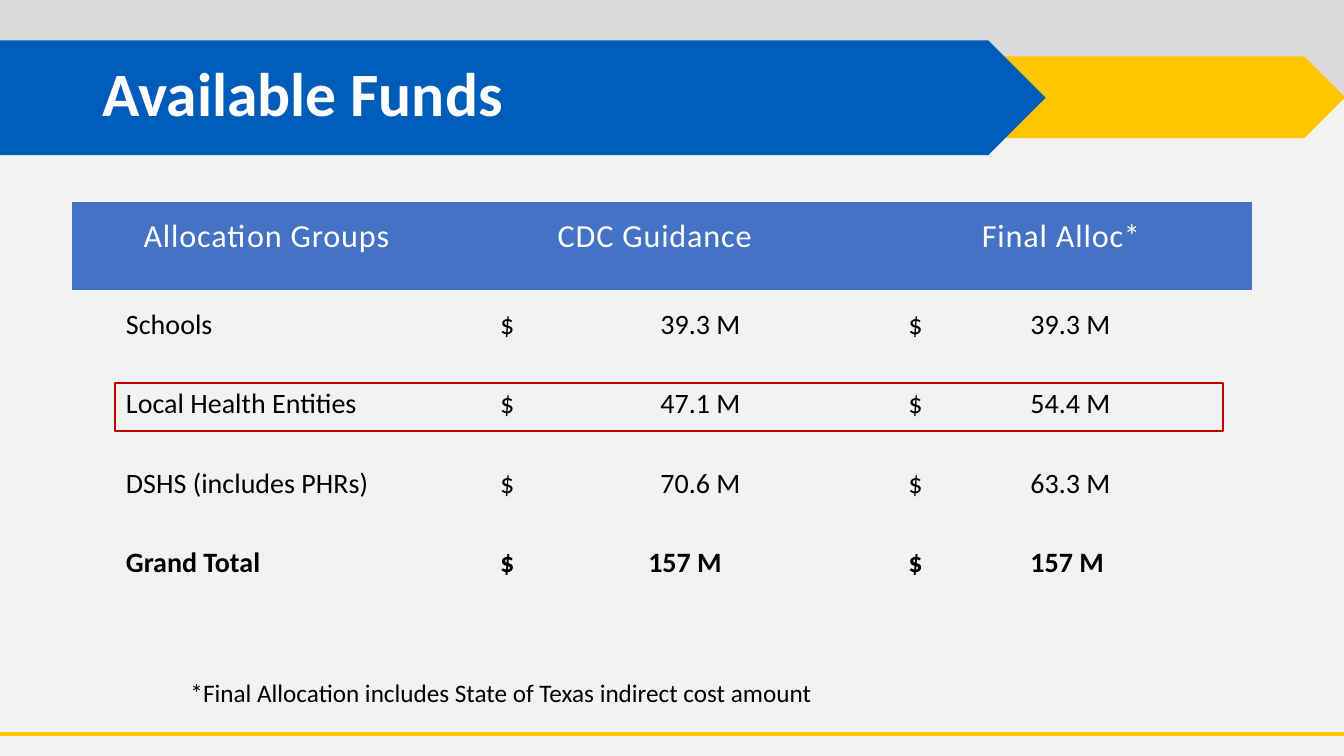
from lxml import etree
from pptx import Presentation
from pptx.dml.color import RGBColor
from pptx.enum.shapes import MSO_CONNECTOR, MSO_SHAPE
from pptx.enum.text import MSO_ANCHOR, PP_ALIGN
from pptx.oxml.ns import qn
from pptx.util import Inches, Pt

RECTANGLE, PENTAGON = MSO_SHAPE.RECTANGLE, MSO_SHAPE.PENTAGON
STRAIGHT = MSO_CONNECTOR.STRAIGHT
MIDDLE, BOTTOM = MSO_ANCHOR.MIDDLE, MSO_ANCHOR.BOTTOM
LEFT, CENTER = PP_ALIGN.LEFT, PP_ALIGN.CENTER

PAPER = RGBColor(0xF2, 0xF2, 0xF2)
GREY = RGBColor(0xD9, 0xD9, 0xD9)
GOLD = RGBColor(0xFF, 0xC6, 0x00)
BLUE = RGBColor(0x00, 0x5C, 0xB9)
HEADER_BLUE = RGBColor(0x44, 0x72, 0xC4)
RED = RGBColor(0xC0, 0x00, 0x00)
WHITE = RGBColor(0xFF, 0xFF, 0xFF)
BLACK = RGBColor(0x00, 0x00, 0x00)
FONT = "Calibri"
NO_GRID_STYLE = "{2D5ABB26-0587-4C30-8999-92F81FD0307C}"

TITLE = "Available Funds"
FOOTNOTE = "*Final Allocation includes State of Texas indirect cost amount"
HEADERS = ["Allocation Groups", "CDC Guidance", "Final Alloc*"]
FUNDS = [
    ("Schools", "39.3 M", "39.3 M"),
    ("Local Health Entities", "47.1 M", "54.4 M"),
    ("DSHS (includes PHRs)", "70.6 M", "63.3 M"),
    ("Grand Total", "157 M", "157 M"),
]
BANNER = [
    (RECTANGLE, (0, -0.03, 13.33, 0.98), GREY),
    (PENTAGON, (7.09, 0.56, 6.25, 0.81), GOLD),
    (PENTAGON, (0, 0.4, 10.37, 1.14), BLUE),
]
COLUMN_WIDTHS = [3.65, 4.05, 4.01]
HEADER_HEIGHT, ROW_HEIGHT = 0.88, 0.79
AMOUNT_TABS = [1.59, 1.21]
TOTAL_TABS = [1.47, 1.21]


def style(paragraph, size, color, bold=False, align=LEFT):
    paragraph.alignment = align
    font = paragraph.font
    font.name, font.size, font.bold = FONT, Pt(size), bold
    font.color.rgb = color


def add_shape(slide, kind, box, fill=None, line=None):
    shape = slide.shapes.add_shape(kind, *map(Inches, box))
    shape.shadow.inherit = False
    if fill is None:
        shape.fill.background()
    else:
        shape.fill.solid()
        shape.fill.fore_color.rgb = fill
    if line is None:
        shape.line.fill.background()
    else:
        shape.line.color.rgb = line
        shape.line.width = Pt(1.5)


def add_text(slide, box, text, size, color, bold=False, align=LEFT):
    frame = slide.shapes.add_textbox(*map(Inches, box)).text_frame
    frame.word_wrap = True
    paragraph = frame.paragraphs[0]
    paragraph.text = text
    paragraph.line_spacing = 0.9
    style(paragraph, size, color, bold, align)
    return frame


def fill_cell(cell, text, anchor, left, inset, fill=None):
    cell.text = text
    cell.vertical_anchor = anchor
    cell.margin_left, cell.margin_top = Inches(left), Inches(0.14)
    cell.margin_right = cell.margin_bottom = Inches(inset)
    if fill is None:
        cell.fill.background()
    else:
        cell.fill.solid()
        cell.fill.fore_color.rgb = fill
    return cell.text_frame.paragraphs[0]


def add_tab(paragraph, position):
    tabs = etree.SubElement(paragraph._p.get_or_add_pPr(), qn("a:tabLst"))
    etree.SubElement(tabs, qn("a:tab"), pos=str(Inches(position)), algn="l")


def add_funds_table(slide):
    height = HEADER_HEIGHT + ROW_HEIGHT * len(FUNDS)
    table = slide.shapes.add_table(
        len(FUNDS) + 1, len(HEADERS), Inches(0.71), Inches(2),
        Inches(sum(COLUMN_WIDTHS)), Inches(height)).table
    table.horz_banding = False
    table._tbl.tblPr.find(qn("a:tableStyleId")).text = NO_GRID_STYLE
    for column, width in zip(table.columns, COLUMN_WIDTHS):
        column.width = Inches(width)
    for index, row in enumerate(table.rows):
        row.height = Inches(ROW_HEIGHT if index else HEADER_HEIGHT)

    for column, header in enumerate(HEADERS):
        paragraph = fill_cell(table.cell(0, column), header, MIDDLE, 0.54, 0.32, HEADER_BLUE)
        style(paragraph, 23, WHITE, align=CENTER)
        paragraph.runs[0]._r.get_or_add_rPr().set("spc", "60")

    for index, (group, *amounts) in enumerate(FUNDS, 1):
        total = index == len(FUNDS)
        fill = None if index % 2 else PAPER
        paragraph = fill_cell(table.cell(index, 0), group, BOTTOM, 0.54, 0.28, fill)
        style(paragraph, 20, BLACK, total)
        tabs = TOTAL_TABS if total else AMOUNT_TABS
        for column, (amount, tab) in enumerate(zip(amounts, tabs), 1):
            paragraph = fill_cell(table.cell(index, column), f"$\t{amount}", BOTTOM, 0.6, 0.28, fill)
            add_tab(paragraph, tab)
            style(paragraph, 20, BLACK, total)


def main():
    presentation = Presentation()
    presentation.slide_width, presentation.slide_height = Inches(13.33), Inches(7.5)
    slide = presentation.slides.add_slide(presentation.slide_layouts[6])
    slide.background.fill.solid()
    slide.background.fill.fore_color.rgb = PAPER

    for kind, box, color in BANNER:
        add_shape(slide, kind, box, fill=color)
    footer = slide.shapes.add_connector(
        STRAIGHT, 0, Inches(7.28), Inches(13.33), Inches(7.28))
    footer.line.color.rgb = GOLD
    footer.line.width = Pt(3)
    etree.SubElement(footer._element.spPr, qn("a:effectLst"))

    title = add_text(slide, (0.92, 0.23, 11.5, 1.45), TITLE, 44, WHITE, bold=True)
    title.vertical_anchor = MIDDLE
    add_funds_table(slide)
    add_text(slide, (1.51, 6.7, 6.92, 0.37), FOOTNOTE, 18, BLACK, align=CENTER)
    add_shape(slide, RECTANGLE, (1.14, 3.8, 10.99, 0.48), line=RED)
    presentation.save("out.pptx")


if __name__ == "__main__":
    main()
